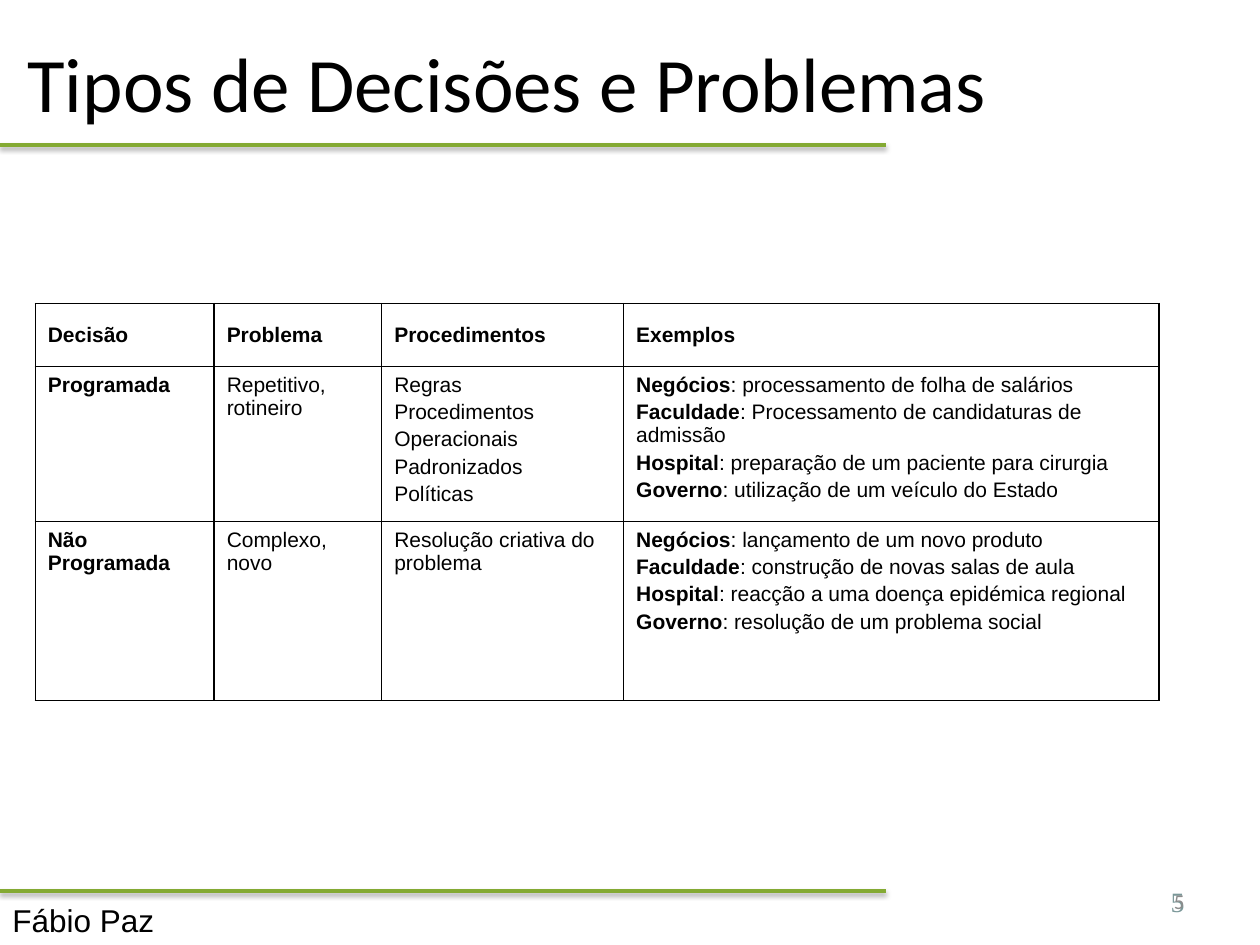
from lxml import etree
from pptx import Presentation
from pptx.dml.color import RGBColor
from pptx.enum.shapes import MSO_CONNECTOR
from pptx.enum.text import MSO_ANCHOR, PP_ALIGN
from pptx.oxml.ns import qn
from pptx.util import Inches, Pt

STRAIGHT = MSO_CONNECTOR.STRAIGHT
TOP, MIDDLE = MSO_ANCHOR.TOP, MSO_ANCHOR.MIDDLE
LEFT, RIGHT, JUSTIFY = PP_ALIGN.LEFT, PP_ALIGN.RIGHT, PP_ALIGN.JUSTIFY
BLACK = RGBColor(0x00, 0x00, 0x00)
GREEN = RGBColor(0x84, 0xAA, 0x33)
SLATE = RGBColor(0x7B, 0x98, 0x99)
GRAY = RGBColor(0x8C, 0x8C, 0x8C)

deck = Presentation()
deck.slide_width, deck.slide_height = Inches(10), Inches(7.5)
page = deck.slides.add_slide(deck.slide_layouts[6])
# One percent of the slide's width and height
COL, ROW = deck.slide_width / 100, deck.slide_height / 100


def spot(*shares):
    """Turn alternating width and height percentages into lengths."""
    return [round(share * (ROW if i % 2 else COL)) for i, share in enumerate(shares)]


def write(para, text, font, size, color, bold=False):
    span = para.add_run()
    span.text = text
    span.font.name, span.font.size, span.font.bold = font, Pt(size), bold
    span.font.color.rgb = color


# Title, footer and the two overlaid page numbers
number_area = (71.7, 92.67, 23.3, 5.33)
for text, area, anchor, align, font, size, color in (
    ("Tipos de Decisões e Problemas", (1.2, 0.27, 90, 16.67), MIDDLE, JUSTIFY, "Calibri", 44, BLACK),
    ("5", number_area, MIDDLE, RIGHT, "Times New Roman", 16, SLATE),
    ("Fábio Paz", (0, 94.67, 90.2, 5.33), TOP, LEFT, "Arial", 18, BLACK),
    ("5", number_area, MIDDLE, RIGHT, "Calibri", 12, GRAY),
):
    box = page.shapes.add_textbox(*spot(*area))
    box.text_frame.word_wrap = True
    box.text_frame.vertical_anchor = anchor
    para = box.text_frame.paragraphs[0]
    para.alignment = align
    write(para, text, font, size, color)

# Green rules with a soft shadow below
for height in (15.33, 94.27):
    rule = page.shapes.add_connector(STRAIGHT, *spot(0, height, 70.3, height))
    rule.line.color.rgb = GREEN
    rule.line.width = Pt(2)
    effects = etree.SubElement(rule._element.spPr, qn("a:effectLst"))
    shadow = etree.SubElement(effects, qn("a:outerShdw"), blurRad=str(Pt(3.1)),
                              dist=str(Pt(1.6)), dir="5400000", rotWithShape="0")
    tint = etree.SubElement(shadow, qn("a:srgbClr"), val=str(BLACK))
    etree.SubElement(tint, qn("a:alpha"), val="38000")

# Table wording: cells hold paragraphs, paragraphs hold (text, bold) runs
header = [[[(name, True)]] for name in ("Decisão", "Problema", "Procedimentos", "Exemplos")]
rows = [header]
for decision, problem, procedures, examples in (
    ("Programada", "Repetitivo, rotineiro",
     ("Regras", "Procedimentos", "Operacionais", "Padronizados", "Políticas"),
     (("Negócios", "processamento de folha de salários"),
      ("Faculdade", "Processamento de candidaturas de admissão"),
      ("Hospital", "preparação de um paciente para cirurgia"),
      ("Governo", "utilização de um veículo do Estado"))),
    ("Não Programada", "Complexo, novo",
     ("Resolução criativa do problema",),
     (("Negócios", "lançamento de um novo produto"),
      ("Faculdade", "construção de novas salas de aula"),
      ("Hospital", "reacção a uma doença epidémica regional"),
      ("Governo", "resolução de um problema social"))),
):
    rows.append([
        [[(decision, True)]],
        [[(problem, False)]],
        [[(step, False)] for step in procedures],
        [[(place, True), (": " + case, False)] for place, case in examples],
    ])

# Table grid
widths = (14.2, 13.3, 19.2, 42.5)
heights = (6.67, 16.4, 18.93)
table = page.shapes.add_table(len(heights), len(widths),
                              *spot(2.8, 32.13, sum(widths), sum(heights))).table
table.first_row = table.horz_banding = False
for column, width in zip(table.columns, widths):
    column.width = round(width * COL)
for line, height in zip(table.rows, heights):
    line.height = round(height * ROW)

# Table cells
for r, row in enumerate(rows):
    for c, paragraphs in enumerate(row):
        cell = table.cell(r, c)
        cell.vertical_anchor = TOP if r else MIDDLE
        for i, spans in enumerate(paragraphs):
            para = cell.text_frame.add_paragraph() if i else cell.text_frame.paragraphs[0]
            if i:
                para.space_before = Pt(2.2)
            for text, bold in spans:
                write(para, text, "Arial", 12, BLACK, bold)
        properties = cell._tc.get_or_add_tcPr()
        for side in ("a:lnL", "a:lnR", "a:lnT", "a:lnB"):
            border = etree.SubElement(properties, qn(side), w=str(Pt(1)))
            paint = etree.SubElement(border, qn("a:solidFill"))
            etree.SubElement(paint, qn("a:srgbClr"), val=str(BLACK))
        cell.fill.background()

deck.save("out.pptx")
